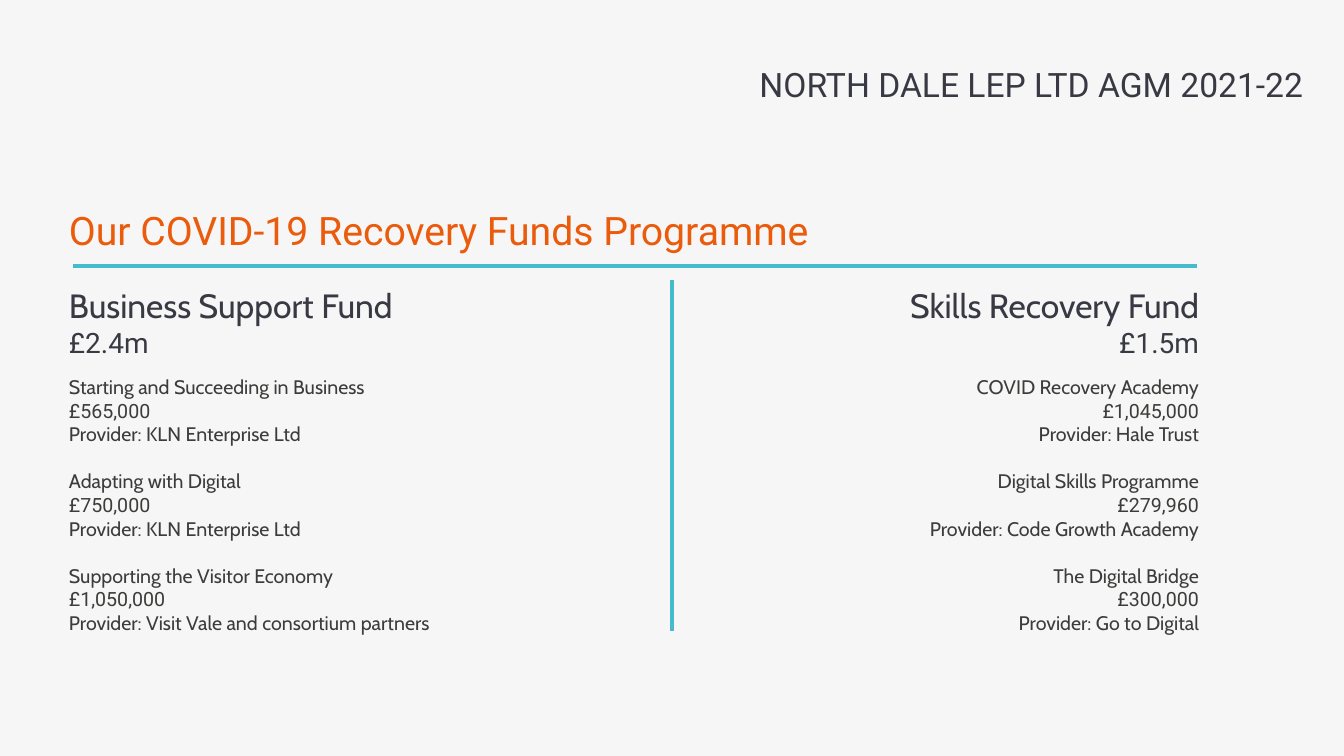
from dataclasses import dataclass

from lxml import etree
from pptx import Presentation
from pptx.dml.color import RGBColor
from pptx.enum.shapes import MSO_CONNECTOR
from pptx.enum.text import MSO_ANCHOR, MSO_AUTO_SIZE, PP_ALIGN
from pptx.oxml.ns import qn
from pptx.slide import Slide
from pptx.util import Emu, Pt

LEFT, RIGHT = PP_ALIGN.LEFT, PP_ALIGN.RIGHT
TOP, MIDDLE = MSO_ANCHOR.TOP, MSO_ANCHOR.MIDDLE
FIT, NO_FIT = MSO_AUTO_SIZE.SHAPE_TO_FIT_TEXT, MSO_AUTO_SIZE.NONE
STRAIGHT = MSO_CONNECTOR.STRAIGHT

EMU_PER_PX = 914400 / 100.8
HEADING_FONT, FIGURE_FONT = "Cabin", "Roboto"
PAPER, INK, BODY, ORANGE, TEAL = "F6F6F6", "393944", "3C3C3B", "EA5B0C", "44BCCD"


@dataclass(frozen=True)
class Line:
    text: str
    font: str
    size: int
    color: str
    space_before: int = 0


@dataclass(frozen=True)
class Project:
    name: str
    amount: str
    provider: str


@dataclass(frozen=True)
class Fund:
    name: str
    total: str
    left: int
    width: int
    align: PP_ALIGN
    projects: tuple[Project, ...]


FUNDS = (
    Fund("Business Support Fund", "£2.4m", 59, 541, LEFT, (
        Project("Starting and Succeeding in Business", "£565,000", "KLN Enterprise Ltd"),
        Project("Adapting with Digital", "£750,000", "KLN Enterprise Ltd"),
        Project("Supporting the Visitor Economy", "£1,050,000", "Visit Vale and consortium partners"),
    )),
    Fund("Skills Recovery Fund", "£1.5m", 702, 507, RIGHT, (
        Project("COVID Recovery Academy", "£1,045,000", "Hale Trust"),
        Project("Digital Skills Programme", "£279,960", "Code Growth Academy"),
        Project("The Digital Bridge", "£300,000", "Go to Digital"),
    )),
)


def px(length: int) -> Emu:
    return Emu(round(length * EMU_PER_PX))


def rgb(value: str) -> RGBColor:
    return RGBColor.from_string(value)


def add_text(page: Slide, bounds: tuple[int, int, int, int], lines: list[Line],
             align: PP_ALIGN = LEFT, anchor: MSO_ANCHOR = TOP,
             fit: MSO_AUTO_SIZE = FIT, line_spacing: float = 1.0) -> None:
    frame = page.shapes.add_textbox(*map(px, bounds)).text_frame
    frame.word_wrap = True
    frame.auto_size = fit
    frame.vertical_anchor = anchor
    for index, line in enumerate(lines):
        para = frame.add_paragraph() if index else frame.paragraphs[0]
        para.text = line.text
        para.alignment = align
        para.line_spacing = line_spacing
        para.space_before = Pt(line.space_before)
        para.font.name = line.font
        para.font.size = Pt(line.size)
        para.font.color.rgb = rgb(line.color)


def add_rule(page: Slide, *ends: int) -> None:
    rule = page.shapes.add_connector(STRAIGHT, *map(px, ends))
    rule.line.color.rgb = rgb(TEAL)
    rule.line.width = Pt(2.25)
    etree.SubElement(rule._element.spPr, qn("a:effectLst"))


def project_lines(projects: tuple[Project, ...]) -> list[Line]:
    lines = []
    for index, project in enumerate(projects):
        lines += [
            Line(project.name, HEADING_FONT, 14, BODY, 17 if index else 0),
            Line(project.amount, FIGURE_FONT, 14, BODY),
            Line(f"Provider: {project.provider}", HEADING_FONT, 14, BODY),
        ]
    return lines


def add_fund(page: Slide, fund: Fund) -> None:
    heading = [Line(fund.name, HEADING_FONT, 24, INK), Line(fund.total, FIGURE_FONT, 20, INK)]
    add_text(page, (fund.left, 280, fund.width, 85), heading, fund.align)
    add_text(page, (fund.left, 370, fund.width, 271), project_lines(fund.projects), fund.align)


def main() -> None:
    deck = Presentation()
    deck.slide_width, deck.slide_height = px(1344), px(756)
    page = deck.slides.add_slide(deck.slide_layouts[6])
    page.background.fill.solid()
    page.background.fill.fore_color.rgb = rgb(PAPER)

    title = Line("Our COVID-19 Recovery Funds Programme", FIGURE_FONT, 28, ORANGE)
    add_text(page, (59, 188, 932, 90), [title], LEFT, MIDDLE, NO_FIT, 0.9)
    meeting = Line("NORTH DALE LEP LTD AGM 2021-22", FIGURE_FONT, 24, INK)
    add_text(page, (481, 59, 832, 50), [meeting], RIGHT)
    for fund in FUNDS:
        add_fund(page, fund)
    add_rule(page, 73, 266, 1197, 266)
    add_rule(page, 672, 280, 672, 631)
    deck.save("out.pptx")


if __name__ == "__main__":
    main()
